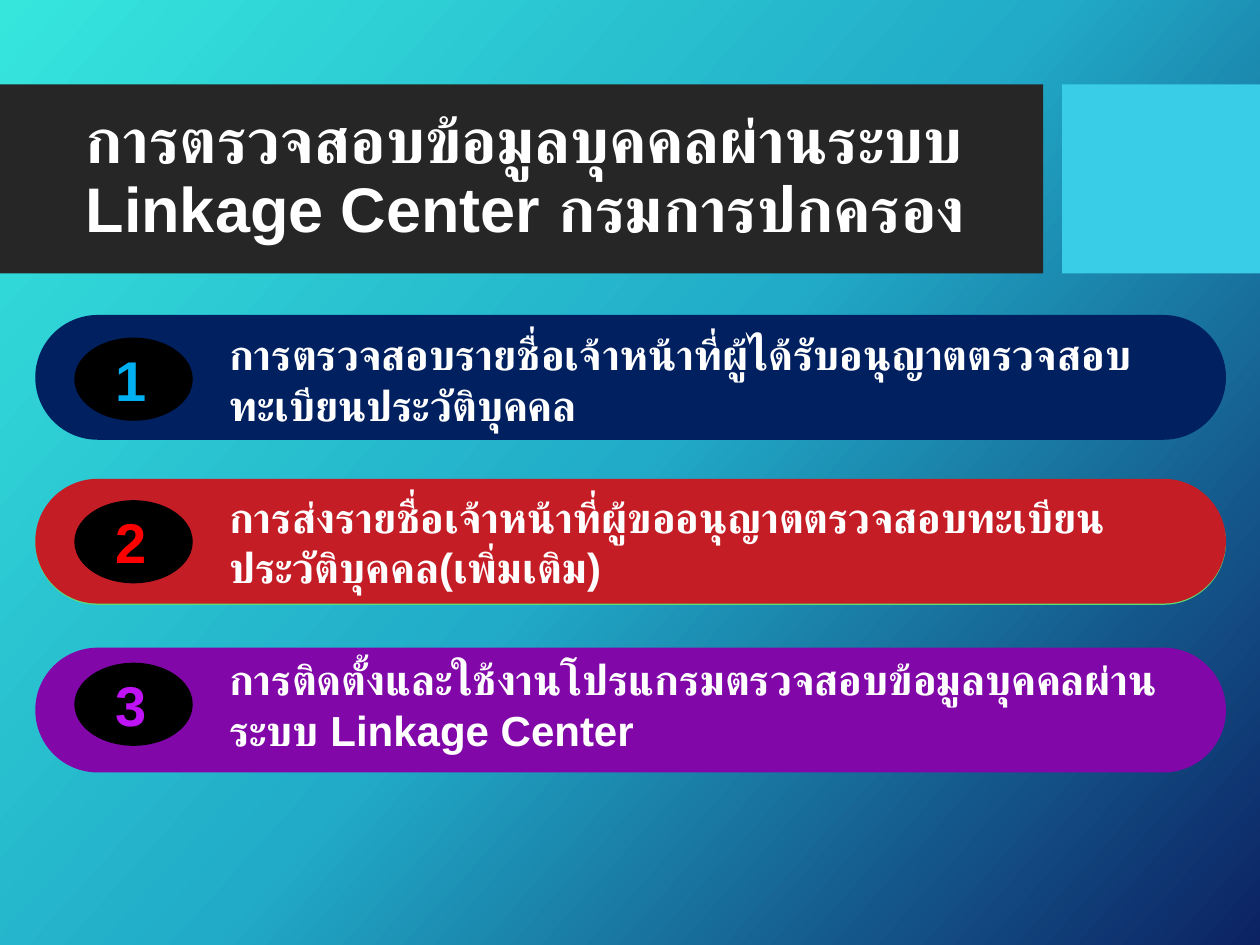
from copy import deepcopy

from pptx import Presentation
from pptx.dml.color import RGBColor
from pptx.enum.lang import MSO_LANGUAGE_ID
from pptx.enum.shapes import MSO_SHAPE
from pptx.enum.text import MSO_ANCHOR, MSO_AUTO_SIZE, PP_ALIGN
from pptx.oxml.ns import qn
from pptx.util import Inches, Pt

RECTANGLE, PILL, OVAL = MSO_SHAPE.RECTANGLE, MSO_SHAPE.ROUNDED_RECTANGLE, MSO_SHAPE.OVAL
TOP, MIDDLE = MSO_ANCHOR.TOP, MSO_ANCHOR.MIDDLE
LEFT, CENTER = PP_ALIGN.LEFT, PP_ALIGN.CENTER
NO_FIT = MSO_AUTO_SIZE.NONE
THAI = MSO_LANGUAGE_ID.THAI

FONT = "Arial"
COLORS = {
    "aqua": "36E6DD", "teal": "21ABC8", "deep": "0C2263",
    "charcoal": "262626", "sky": "39CDE7", "white": "FFFFFF", "black": "000000",
    "navy": "002060", "green": "60DE72", "crimson": "C51D26", "purple": "8207A9",
    "blue": "00B0F0", "red": "FF0000", "violet": "BF12F6",
}
TITLE = "การตรวจสอบข้อมูลบุคคลผ่านระบบ Linkage Center กรมการปกครอง"
ROWS = [
    (2.5, "navy", "blue", 7.48,
     "การตรวจสอบรายชื่อเจ้าหน้าที่ผู้ได้รับอนุญาตตรวจสอบทะเบียนประวัติบุคคล"),
    (3.8, "crimson", "red", 7.48,
     "การส่งรายชื่อเจ้าหน้าที่ผู้ขออนุญาตตรวจสอบทะเบียนประวัติบุคคล(เพิ่มเติม)"),
    (5.14, "purple", "violet", 7.87,
     "การติดตั้งและใช้งานโปรแกรมตรวจสอบข้อมูลบุคคลผ่านระบบ Linkage Center"),
]
FIRST_BADGE_TOP = 2.68
ROW_PITCH = 1.29


def color(name):
    return RGBColor.from_string(COLORS[name])


class SlideBuilder:
    def __init__(self, slide):
        self.slide = slide

    def background(self, names, angle):
        fill = self.slide.background.fill
        fill.gradient()
        fill.gradient_angle = 360 - angle
        stop_list = next(self.slide.element.iter(qn("a:gsLst")))
        stop_list.append(deepcopy(stop_list[-1]))
        for index, (stop, name) in enumerate(zip(fill.gradient_stops, names)):
            stop.position = index / (len(names) - 1)
            stop.color.rgb = color(name)

    def shape(self, kind, left, top, width, height, fill):
        shape = self.slide.shapes.add_shape(
            kind, Inches(left), Inches(top), Inches(width), Inches(height))
        shape.shadow.inherit = False
        shape.fill.solid()
        shape.fill.fore_color.rgb = color(fill)
        shape.line.fill.background()
        if kind == PILL:
            shape.adjustments[0] = 0.5

    def add_words(self, shape, text, size, font_color, align, anchor):
        frame = shape.text_frame
        frame.word_wrap = True
        frame.auto_size = NO_FIT
        frame.vertical_anchor = anchor
        paragraph = frame.paragraphs[0]
        paragraph.alignment = align
        run = paragraph.add_run()
        run.text = text
        font = run.font
        font.name, font.size, font.bold = FONT, Pt(size), True
        font.color.rgb = color(font_color)
        font.language_id = THAI
        properties = run._r.get_or_add_rPr()
        properties.append(properties.makeelement(qn("a:cs"), {"typeface": FONT}))
        return paragraph

    def text(self, left, top, width, height, text, size, font_color,
             align=LEFT, anchor=MIDDLE):
        box = self.slide.shapes.add_textbox(
            Inches(left), Inches(top), Inches(width), Inches(height))
        self.add_words(box, text, size, font_color, align, anchor)

    def title(self, left, top, width, height, text):
        title = self.slide.shapes.title
        title.left, title.top = Inches(left), Inches(top)
        title.width, title.height = Inches(width), Inches(height)
        paragraph = self.add_words(title, text, 36, "white", LEFT, MIDDLE)
        paragraph.line_spacing = 0.9
        title.element.getparent().append(title.element)

    def row(self, number, pill_top, fill, accent, label_width, label):
        top = FIRST_BADGE_TOP + ROW_PITCH * (number - 1)
        self.shape(PILL, 0.28, pill_top, 9.45, 0.99, fill)
        self.shape(OVAL, 0.59, top, 0.94, 0.66, "black")
        self.text(0.56, top + 0.01, 0.96, 0.64, str(number), 32, accent, CENTER, TOP)
        self.text(1.72, top + 0.08, label_width, 0.5, label, 24, "white")


def main():
    presentation = Presentation()
    presentation.slide_width, presentation.slide_height = Inches(10), Inches(7.5)
    slide = presentation.slides.add_slide(presentation.slide_layouts[5])
    builder = SlideBuilder(slide)
    builder.background(["aqua", "teal", "deep"], 42)
    builder.shape(RECTANGLE, 0, 0.67, 8.28, 1.5, "charcoal")
    builder.shape(RECTANGLE, 8.43, 0.67, 1.57, 1.5, "sky")
    builder.title(0.58, 0.82, 7.65, 1.18, TITLE)
    builder.shape(PILL, 0.28, 3.81, 9.45, 0.99, "green")
    for number, row in enumerate(ROWS, start=1):
        builder.row(number, *row)
    presentation.save("out.pptx")


if __name__ == "__main__":
    main()
